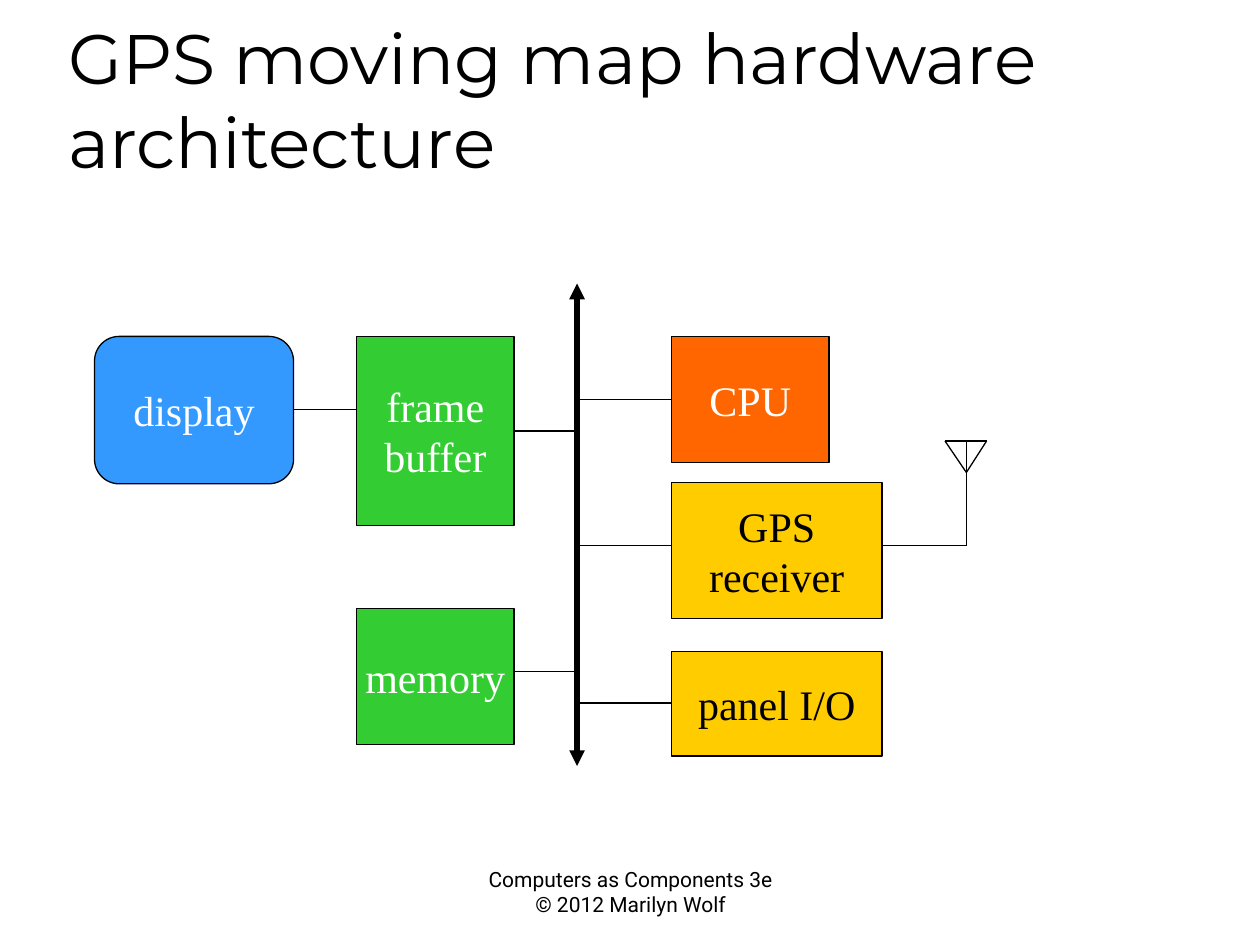
from lxml.etree import SubElement
from pptx import Presentation
from pptx.dml.color import RGBColor
from pptx.enum.shapes import MSO_CONNECTOR, MSO_SHAPE
from pptx.enum.text import MSO_ANCHOR, PP_ALIGN
from pptx.oxml.ns import qn
from pptx.util import Inches, Pt

THEME = {
    "black": "000000", "white": "FFFFFF", "blue": "3399FF",
    "green": "33CC33", "orange": "FF6600", "yellow": "FFCC00",
    "title": ("Montserrat", 40), "block": ("Times New Roman", 24),
    "footer": ("Roboto", 12), "thin": 0.75, "thick": 3,
}

# Content: text, left, top, width, height, fill, text colour
TITLE = "GPS moving map hardware architecture"
FOOTER = "Computers as Components 3e\n© 2012 Marilyn Wolf"
BLOCKS = [
    ("GPS\nreceiver", 5.33, 3.83, 1.67, 1.08, "yellow", "black"),
    ("CPU", 5.33, 2.67, 1.25, 1, "orange", "white"),
    ("panel I/O", 5.33, 5.17, 1.67, 0.83, "yellow", "black"),
    ("display", 0.75, 2.67, 1.58, 1.17, "blue", "white"),
    ("frame\nbuffer", 2.83, 2.67, 1.25, 1.5, "green", "white"),
    ("memory", 2.83, 4.83, 1.25, 1.08, "green", "white"),
]
ROUNDED = {"display": 0.167}

BUS_X, BUS_TOP, BUS_BOTTOM = 4.58, 2.25, 6.08
LEFT_EDGE, RIGHT_EDGE = 4.08, 5.33
LEFT_TAPS = [3.42, 5.33]
RIGHT_TAPS = [3.17, 4.33, 5.58]
DISPLAY_LINK = (2.33, 3.25, 2.83, 3.25)
MAST_X, MAST_TOP, MAST_BOTTOM = 7.67, 3.5, 4.33
ANTENNA_LEFT, ANTENNA_RIGHT, ANTENNA_TIP = 7.5, 7.83, 3.75
RECEIVER_EDGE = 7


def colour(name):
    return RGBColor.from_string(THEME[name])


def write(shape, text, style, text_colour, alignment, anchor, wrap):
    frame = shape.text_frame
    frame.text = text
    frame.word_wrap = wrap
    frame.vertical_anchor = anchor
    family, size = THEME[style]
    for paragraph in frame.paragraphs:
        paragraph.alignment = alignment
        for run in paragraph.runs:
            run.font.name = family
            run.font.size = Pt(size)
            run.font.color.rgb = colour(text_colour)


def add_line(slide, x1, y1, x2, y2, weight="thin", arrows=False):
    line = slide.shapes.add_connector(
        MSO_CONNECTOR.STRAIGHT, Inches(x1), Inches(y1), Inches(x2), Inches(y2))
    line.line.color.rgb = colour("black")
    line.line.width = Pt(THEME[weight])
    if arrows:
        for end in ("a:headEnd", "a:tailEnd"):
            SubElement(line.line._get_or_add_ln(), qn(end), type="triangle")
    SubElement(line._element.spPr, qn("a:effectLst"))


def add_block(slide, text, left, top, width, height, fill, text_colour):
    kind = MSO_SHAPE.ROUNDED_RECTANGLE if text in ROUNDED else MSO_SHAPE.RECTANGLE
    block = slide.shapes.add_shape(
        kind, Inches(left), Inches(top), Inches(width), Inches(height))
    if text in ROUNDED:
        block.adjustments[0] = ROUNDED[text]
    block.shadow.inherit = False
    block.fill.solid()
    block.fill.fore_color.rgb = colour(fill)
    block.line.color.rgb = colour("black")
    block.line.width = Pt(THEME["thin"])
    write(block, text, "block", text_colour, PP_ALIGN.CENTER, MSO_ANCHOR.MIDDLE, False)


def main():
    presentation = Presentation()
    presentation.slide_width, presentation.slide_height = Inches(10), Inches(7.5)
    slide = presentation.slides.add_slide(presentation.slide_layouts[5])

    # Title and footer
    title = slide.shapes.title
    title.left, title.top = Inches(0.44), Inches(0.25)
    title.width, title.height = Inches(8.5), Inches(1.25)
    write(title, TITLE, "title", "black", PP_ALIGN.LEFT, MSO_ANCHOR.BOTTOM, True)
    footer = slide.shapes.add_textbox(
        Inches(3.67), Inches(6.83), Inches(2.67), Inches(0.5))
    write(footer, FOOTER, "footer", "black", PP_ALIGN.CENTER, MSO_ANCHOR.TOP, True)

    # Hardware blocks
    for block in BLOCKS:
        add_block(slide, *block)

    # Bus and its taps
    add_line(slide, BUS_X, BUS_TOP, BUS_X, BUS_BOTTOM, "thick", arrows=True)
    for edge, taps in ((LEFT_EDGE, LEFT_TAPS), (RIGHT_EDGE, RIGHT_TAPS)):
        for y in taps:
            add_line(slide, edge, y, BUS_X, y)
    add_line(slide, *DISPLAY_LINK)

    # Antenna and its feed
    add_line(slide, MAST_X, MAST_TOP, MAST_X, MAST_BOTTOM)
    add_line(slide, ANTENNA_LEFT, MAST_TOP, ANTENNA_RIGHT, MAST_TOP)
    for x in (ANTENNA_LEFT, ANTENNA_RIGHT):
        add_line(slide, x, MAST_TOP, MAST_X, ANTENNA_TIP)
    add_line(slide, MAST_X, MAST_BOTTOM, RECEIVER_EDGE, MAST_BOTTOM)

    presentation.save("out.pptx")


if __name__ == "__main__":
    main()
